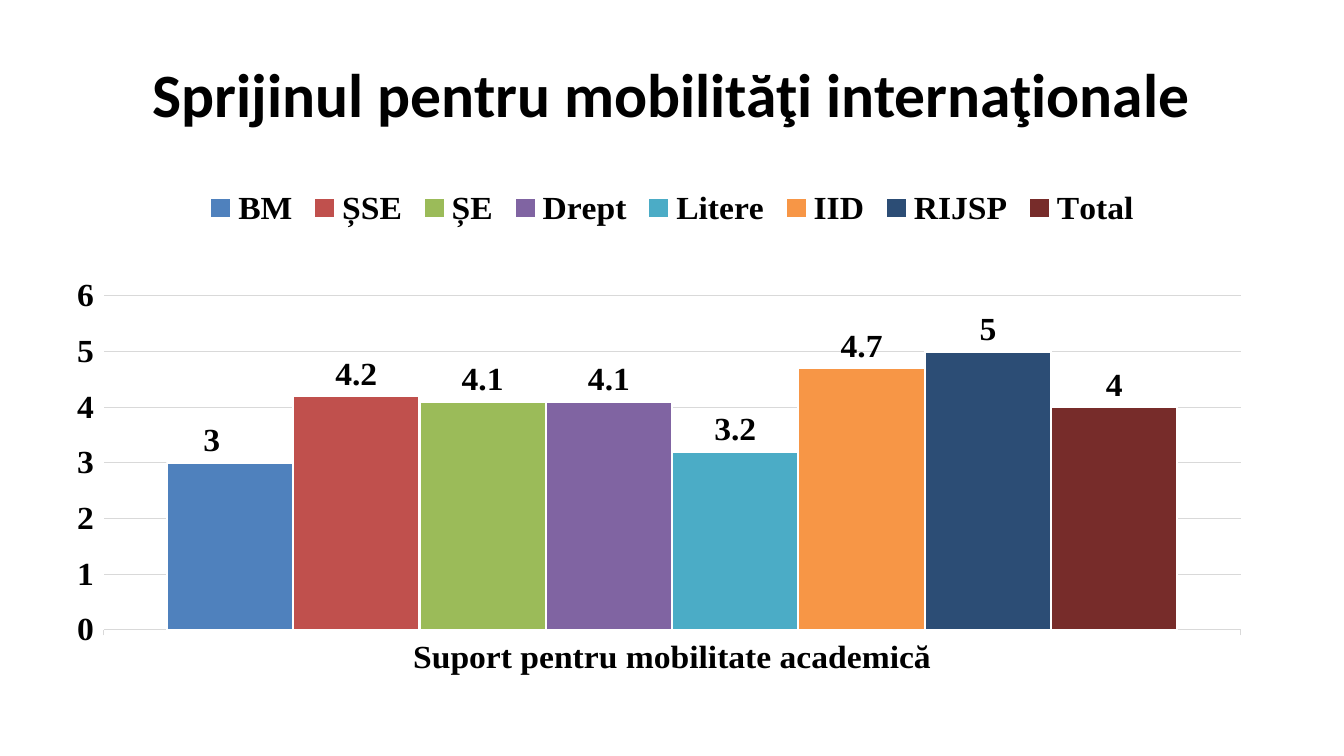
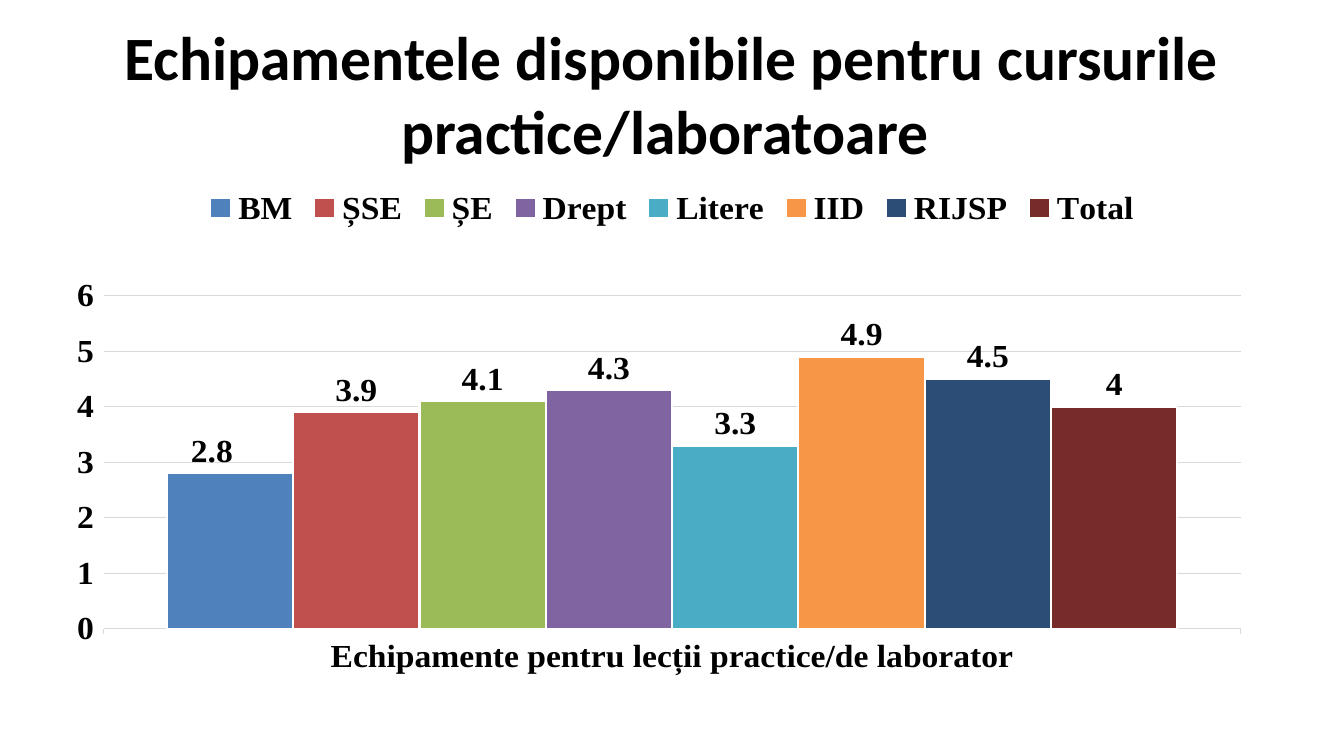
from pptx import Presentation
from pptx.chart.data import CategoryChartData
from pptx.dml.color import RGBColor
from pptx.enum.chart import XL_CHART_TYPE, XL_LABEL_POSITION, XL_LEGEND_POSITION, XL_TICK_MARK
from pptx.enum.text import MSO_ANCHOR, MSO_AUTO_SIZE, PP_ALIGN
from pptx.oxml import parse_xml
from pptx.oxml.ns import nsdecls, qn
from pptx.util import Cm, Pt

# Shared style
BLACK, WHITE, GRID = "000000", "FFFFFF", "D9D9D9"
LEFT, WIDTH = Cm(1.7), Cm(30.48)
FACULTIES = {
    "BM": "4F81BD", "ȘSE": "C0504D", "ȘE": "9BBB59", "Drept": "8064A2",
    "Litere": "4BACC6", "IID": "F79646", "RIJSP": "2C4D75", "Total": "772C2A",
}
PLOT_LAYOUT = (
    '<c:layoutTarget val="inner"/><c:xMode val="edge"/><c:yMode val="edge"/>'
    '<c:x val="0.03"/><c:y val="0.25"/><c:w val="0.94"/><c:h val="0.7"/>'
)
FIRST_LABEL_LAYOUT = '<c:x val="-0.015"/><c:y val="0"/>'

# Slide title, category under the bars, one score per faculty
SLIDES = [
    ("Sprijinul pentru mobilităţi internaţionale",
     "Suport pentru mobilitate academică",
     [3, 4.2, 4.1, 4.1, 3.2, 4.7, 5, 4]),
    ("Echipamentele disponibile pentru cursurile practice/laboratoare ",
     "Echipamente pentru lecții practice/de laborator",
     [2.8, 3.9, 4.1, 4.3, 3.3, 4.9, 4.5, 4]),
]


def set_font(font, name, size, color=BLACK):
    font.name, font.size, font.bold = name, Pt(size), True
    font.color.rgb = RGBColor.from_string(color)


def set_layout(parent, index, values):
    for old in parent.findall(qn("c:layout")):
        parent.remove(old)
    parent.insert(index, parse_xml(
        f'<c:layout {nsdecls("c")}><c:manualLayout>{values}</c:manualLayout></c:layout>'))


prs = Presentation()
prs.slide_width, prs.slide_height = Cm(33.87), Cm(19.05)

for title, category, scores in SLIDES:
    s = prs.slides.add_slide(prs.slide_layouts[5])

    # Title
    sp = s.shapes.title
    sp.left, sp.top, sp.width, sp.height = LEFT, Cm(0.76), WIDTH, Cm(3.18)
    tf = sp.text_frame
    tf.text = title
    tf.word_wrap = True
    tf.auto_size = MSO_AUTO_SIZE.NONE
    tf.vertical_anchor = MSO_ANCHOR.MIDDLE
    p = tf.paragraphs[0]
    p.alignment = PP_ALIGN.CENTER
    set_font(p.runs[0].font, "Calibri", 44)

    # Chart with one series per faculty
    data = CategoryChartData()
    data.categories = [category]
    for name, score in zip(FACULTIES, scores):
        data.add_series(name, [score])
    chart = s.shapes.add_chart(
        XL_CHART_TYPE.COLUMN_CLUSTERED, LEFT, Cm(4.45), WIDTH, Cm(12.57), data).chart
    chart.has_title = False
    set_font(chart.font, "Times New Roman", 24)
    set_layout(chart.plots[0]._element.getparent(), 0, PLOT_LAYOUT)

    # Legend
    chart.has_legend = True
    chart.legend.position = XL_LEGEND_POSITION.TOP
    chart.legend.include_in_layout = False
    set_font(chart.legend.font, "Times New Roman", 24)

    # Axes
    cat_axis, val_axis = chart.category_axis, chart.value_axis
    for axis in (cat_axis, val_axis):
        axis.major_tick_mark = XL_TICK_MARK.OUTSIDE
        set_font(axis.tick_labels.font, "Times New Roman", 24)
    val_axis.minimum_scale, val_axis.maximum_scale, val_axis.major_unit = 0, 6, 1
    val_axis.has_major_gridlines = True
    val_axis.format.line.fill.background()
    for line in (cat_axis.format.line, val_axis.major_gridlines.format.line):
        line.color.rgb = RGBColor.from_string(GRID)
        line.width = Pt(0.75)

    # Bars and their values
    plot = chart.plots[0]
    plot.gap_width, plot.overlap = 100, 0
    plot.vary_by_categories = False
    for series, color in zip(plot.series, FACULTIES.values()):
        series.format.fill.solid()
        series.format.fill.fore_color.rgb = RGBColor.from_string(color)
        series.format.line.color.rgb = RGBColor.from_string(WHITE)
        series.format.line.width = Pt(1.5)
        labels = series.data_labels
        labels.show_value = True
        labels.position = XL_LABEL_POSITION.OUTSIDE_END
        set_font(labels.font, "Times New Roman", 24)

    # The first value sits a little left of its bar's centre
    first = plot.series[0]
    label = first.points[0].data_label
    set_font(label.font, "Times New Roman", 24)
    label.position = XL_LABEL_POSITION.OUTSIDE_END
    set_layout(first.data_labels._element.find(qn("c:dLbl")), 1, FIRST_LABEL_LAYOUT)

prs.save("out.pptx")
